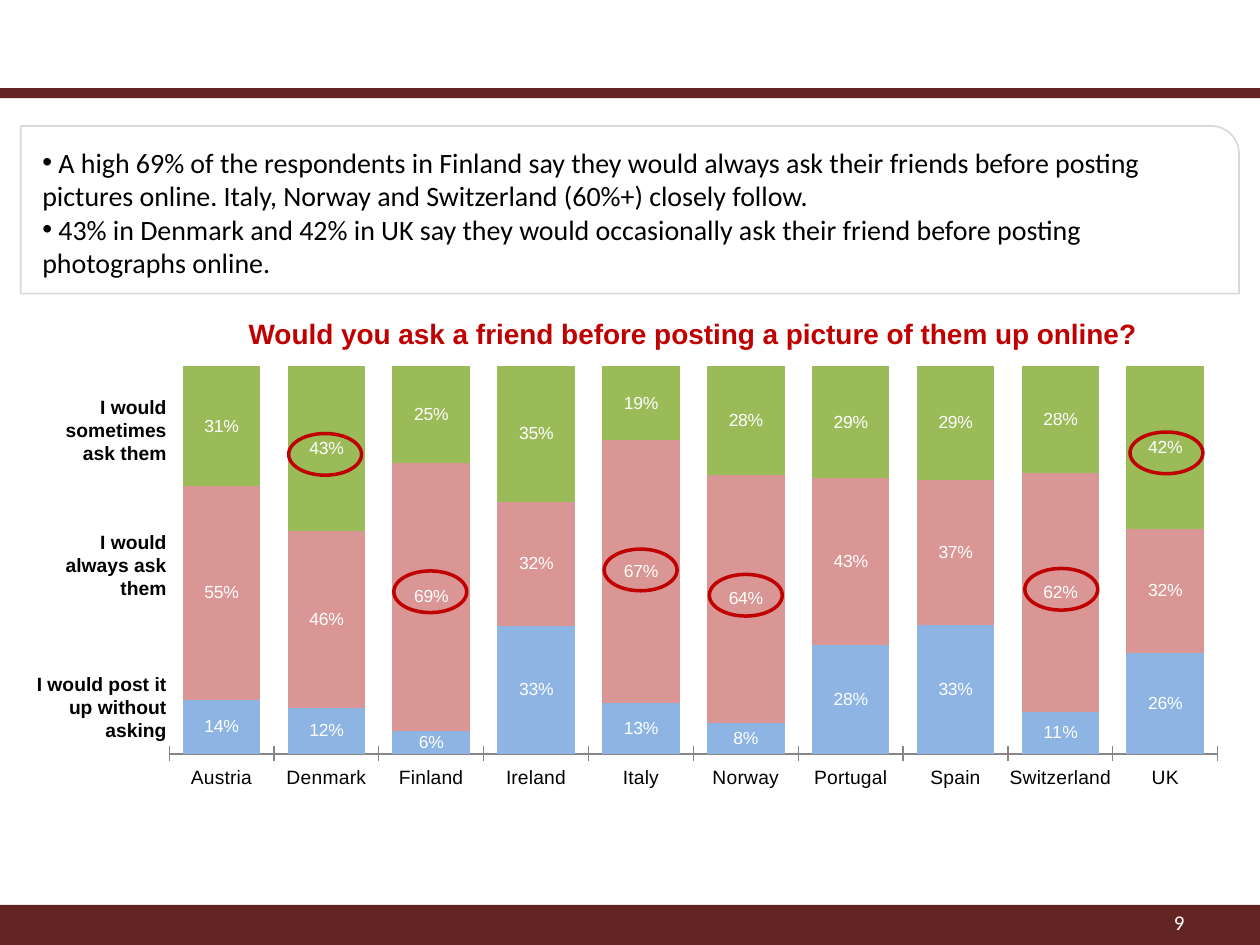
"""Build the slide on asking friends before posting their pictures online."""
from dataclasses import dataclass

from lxml import etree
from pptx import Presentation
from pptx.chart.data import CategoryChartData
from pptx.dml.color import RGBColor
from pptx.enum.chart import XL_CHART_TYPE, XL_LABEL_POSITION, XL_TICK_LABEL_POSITION, XL_TICK_MARK
from pptx.enum.shapes import MSO_SHAPE
from pptx.enum.text import MSO_ANCHOR, MSO_AUTO_SIZE, PP_ALIGN
from pptx.oxml.ns import qn
from pptx.util import Cm, Pt

STACK = XL_CHART_TYPE.COLUMN_STACKED_100
MID = XL_LABEL_POSITION.CENTER
LOW = XL_TICK_LABEL_POSITION.LOW
CROSS = XL_TICK_MARK.CROSS
RECT, OVAL, ROUND = MSO_SHAPE.RECTANGLE, MSO_SHAPE.OVAL, MSO_SHAPE.ROUND_1_RECTANGLE
TOP, CENTRE = MSO_ANCHOR.TOP, MSO_ANCHOR.MIDDLE
FIXED = MSO_AUTO_SIZE.NONE
LEFT, MIDDLE, RIGHT = PP_ALIGN.LEFT, PP_ALIGN.CENTER, PP_ALIGN.RIGHT


@dataclass(frozen=True)
class Theme:
    """Hold the colours, fonts and type sizes."""
    band: str = "632523"
    edge: str = "D9D9D9"
    red: str = "C00000"
    black: str = "000000"
    white: str = "FFFFFF"
    axis: str = "868686"
    sans: str = "Arial"
    body: str = "Calibri"
    large: int = 16
    base: int = 12
    label: int = 11
    small: int = 10


@dataclass(frozen=True)
class Box:
    """Give a place and size in centimetres."""
    left: float
    top: float
    width: float
    height: float

    def area(self) -> tuple:
        """Return the four lengths."""
        return Cm(self.left), Cm(self.top), Cm(self.width), Cm(self.height)


@dataclass(frozen=True)
class Style:
    """Describe a run of text and its alignment."""
    size: int
    face: str
    hue: str
    bold: bool = False
    align: PP_ALIGN = LEFT
    anchor: MSO_ANCHOR = CENTRE


@dataclass(frozen=True)
class Answer:
    """Describe one answer: its label, colour and shares."""
    text: str
    top: float
    hue: str
    shares: tuple


@dataclass(frozen=True)
class Ring:
    """Mark the share of one land."""
    land: str
    top: float


THEME = Theme()
HEAD = Style(THEME.large, THEME.sans, THEME.red, True, MIDDLE, TOP)
LIST = Style(THEME.large, THEME.body, THEME.black, anchor=TOP)
LABEL = Style(THEME.label, THEME.sans, THEME.black, True, RIGHT)
PAGE = Style(THEME.base, THEME.body, THEME.white, align=RIGHT)

BANDS = (Box(0, 18.24, 25.4, 0.81), Box(0, 18.26, 25.4, 0.2), Box(0, 1.78, 25.4, 0.2))
LANDS = ("Austria", "Denmark", "Finland", "Ireland", "Italy",
         "Norway", "Portugal", "Spain", "Switzerland", "UK")
ANSWERS = (
    Answer("I would post it up without asking", 13.41, "8EB4E3",
           (0.14, 0.12, 0.06, 0.33, 0.13, 0.08, 0.28, 0.33, 0.11, 0.26)),
    Answer("I would always ask them", 10.54, "D99694",
           (0.55, 0.46, 0.69, 0.32, 0.67, 0.64, 0.43, 0.37, 0.62, 0.32)),
    Answer("I would sometimes ask them", 7.82, "9BBB59",
           (0.31, 0.43, 0.25, 0.35, 0.19, 0.28, 0.29, 0.29, 0.28, 0.42)),
)
RINGS = (Ring("Finland", 11.51), Ring("Italy", 11.07), Ring("Norway", 11.58),
         Ring("Switzerland", 11.46), Ring("Denmark", 8.74), Ring("UK", 8.71))
FIRST, PITCH = 3.7, 2.12
TITLE = "Would you ask a friend before posting a picture of them up online?"
POINTS = (
    " A high 69% of the respondents in Finland say they would always ask their friends "
    "before posting pictures online. Italy, Norway and Switzerland (60%+) closely follow.",
    " 43% in Denmark and 42% in UK say they would occasionally ask their friend "
    "before posting photographs online.",
)


def paint(font, size: int, face: str, hue: str) -> None:
    """Set the size, face and colour of a font."""
    font.size, font.name = Pt(size), face
    font.color.rgb = RGBColor.from_string(hue)


def write(shape, texts: tuple, style: Style, bullet: bool = False) -> None:
    """Fill a shape with one paragraph per text."""
    frame = shape.text_frame
    frame.word_wrap, frame.auto_size = True, FIXED
    frame.vertical_anchor = style.anchor
    for rank, text in enumerate(texts):
        para = frame.add_paragraph() if rank else frame.paragraphs[0]
        para.alignment = style.align
        para.space_before = Pt(0)
        if bullet:
            props = para._p.get_or_add_pPr()
            props.set("marL", "0")
            props.set("indent", "0")
            etree.SubElement(props, qn("a:buFont"), typeface="Arial")
            etree.SubElement(props, qn("a:buChar"), char="•")
        run = para.add_run()
        run.text = text
        paint(run.font, style.size, style.face, style.hue)
        run.font.bold = style.bold


def place(shape, box: Box) -> None:
    """Move and size a shape."""
    shape.left, shape.top, shape.width, shape.height = box.area()


def draw(slide, kind: MSO_SHAPE, box: Box, fill: str = "", line: str = "", width: float = 1) -> None:
    """Add a filled or outlined shape."""
    shape = slide.shapes.add_shape(kind, *box.area())
    shape.shadow.inherit = False
    if fill:
        shape.fill.solid()
        shape.fill.fore_color.rgb = RGBColor.from_string(fill)
    else:
        shape.fill.background()
    if line:
        shape.line.color.rgb = RGBColor.from_string(line)
        shape.line.width = Pt(width)
    else:
        shape.line.fill.background()


def fit(chart) -> None:
    """Fix the inner plot area as parts of the chart."""
    area = chart._chartSpace.find(".//" + qn("c:plotArea"))
    for old in area.findall(qn("c:layout")):
        area.remove(old)
    layout = etree.Element(qn("c:layout"))
    manual = etree.SubElement(layout, qn("c:manualLayout"))
    parts = {"layoutTarget": "inner", "xMode": "edge", "yMode": "edge",
             "x": "0.02", "y": "0.02", "w": "0.96", "h": "0.88"}
    for name, value in parts.items():
        etree.SubElement(manual, qn("c:" + name), val=value)
    area.insert(0, layout)


def plot(slide, box: Box) -> None:
    """Add the stacked chart of shares by land."""
    data = CategoryChartData(number_format="0%")
    data.categories = LANDS
    for rank, answer in enumerate(ANSWERS, 1):
        data.add_series(f"Series {rank}", answer.shares)
    chart = slide.shapes.add_chart(STACK, *box.area(), data).chart
    chart.has_legend = chart.has_title = False
    paint(chart.font, THEME.base, THEME.sans, THEME.black)
    bars = chart.plots[0]
    bars.gap_width, bars.overlap, bars.vary_by_categories = 35, 100, False
    for series, answer in zip(bars.series, ANSWERS):
        series.format.fill.solid()
        series.format.fill.fore_color.rgb = RGBColor.from_string(answer.hue)
        labels = series.data_labels
        labels.show_value, labels.position = True, MID
        labels.number_format, labels.number_format_is_linked = "0%", False
        paint(labels.font, THEME.small, THEME.sans, THEME.white)
    lands, shares = chart.category_axis, chart.value_axis
    lands.major_tick_mark, lands.tick_label_position = CROSS, LOW
    lands.format.line.color.rgb = RGBColor.from_string(THEME.axis)
    paint(lands.tick_labels.font, THEME.label, THEME.sans, THEME.black)
    shares.visible = shares.has_major_gridlines = False
    shares.minimum_scale, shares.maximum_scale = 0, 1
    fit(chart)


def main() -> None:
    """Build and save the slide."""
    deck = Presentation()
    deck.slide_width, deck.slide_height = Cm(25.4), Cm(19.05)
    slide = deck.slides.add_slide(deck.slide_layouts[1])
    title, body = slide.shapes.title, slide.placeholders[1]
    place(title, Box(3.71, 6.25, 20.52, 0.94))
    write(title, (TITLE,), HEAD)
    place(body, Box(0.6, 2.8, 24.15, 3))
    write(body, POINTS, LIST, bullet=True)
    for band in BANDS:
        draw(slide, RECT, band, fill=THEME.band)
    plot(slide, Box(2.97, 7.2, 22.02, 8.89))
    write(slide.shapes.add_textbox(*Box(18.2, 18.12, 5.93, 0.93).area()), ("9",), PAGE)
    draw(slide, ROUND, Box(0.42, 2.54, 24.56, 3.38), line=THEME.edge)
    for answer in ANSWERS:
        label = slide.shapes.add_textbox(*Box(0.43, answer.top, 3.18, 1.68).area())
        write(label, (answer.text,), LABEL)
    for ring in RINGS:
        left = FIRST + PITCH * LANDS.index(ring.land)
        draw(slide, OVAL, Box(left, ring.top, 1.47, 0.84), line=THEME.red, width=2)
    deck.save("out.pptx")


if __name__ == "__main__":
    main()
